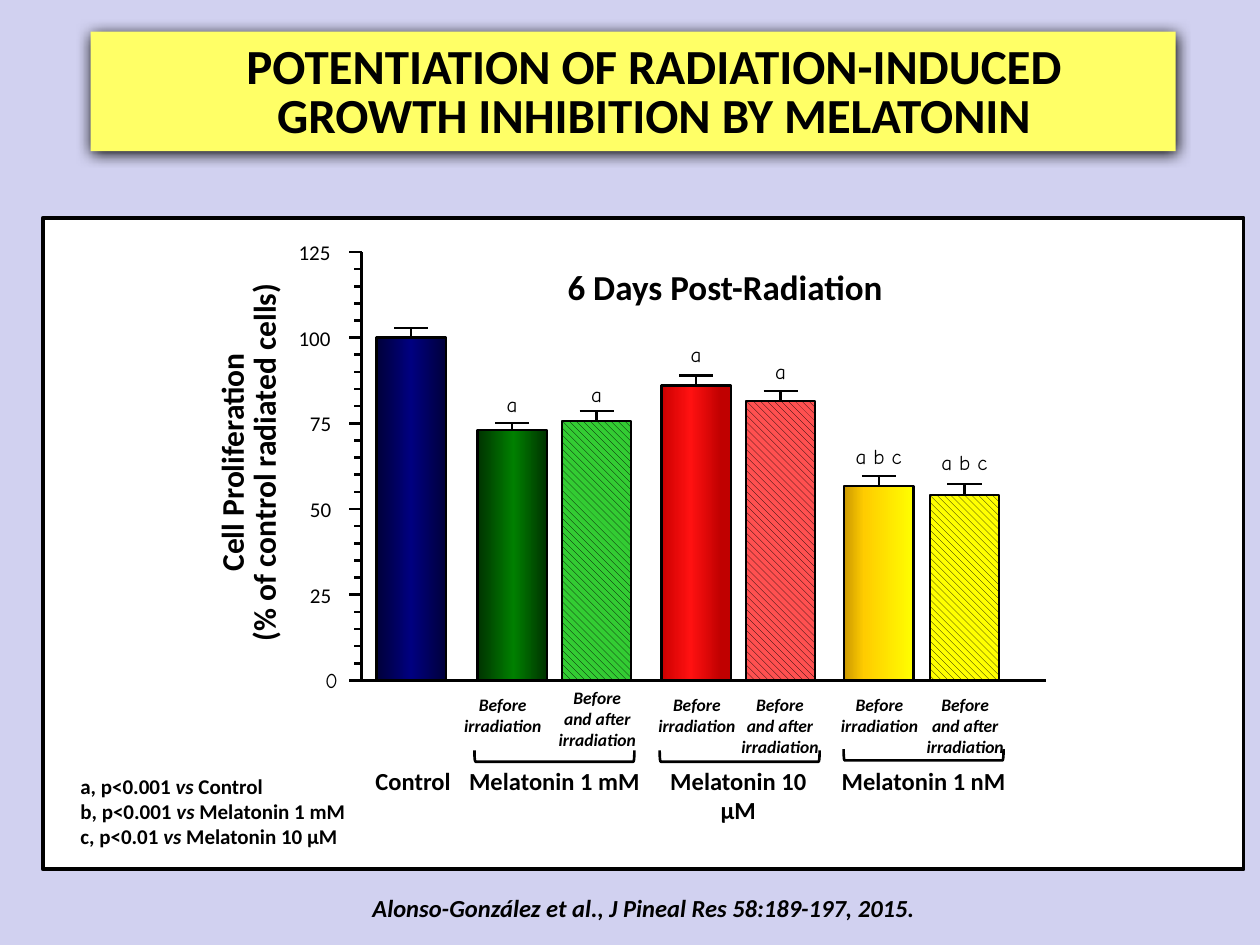
from copy import deepcopy
from dataclasses import dataclass

from lxml import etree
from pptx import Presentation
from pptx import util as u
from pptx.dml.color import RGBColor
from pptx.enum import dml, shapes, text
from pptx.oxml import ns

BLACK, WHITE = "000000", "FFFFFF"
AXIS_LEFT, AXIS_RIGHT, BASELINE, AXIS_TOP = 2.87, 8.3, 5.4, 2.0
TICK_STEP, TICK_MAX = 5, 125
BAR_WIDTH, CAP_WIDTH = 0.55, 0.27
BEFORE, BEFORE_AND_AFTER = "Before irradiation", "Before and after irradiation"


@dataclass
class Bar:
    left: float
    top: float
    cap: float
    stops: tuple = ()
    hatch: str = ""
    line: float = 1.25
    letters: str = ""
    letters_top: float = 0
    caption: str = ""
    caption_left: float = 0
    caption_top: float = 5.46


@dataclass
class Group:
    label: str
    left: float
    width: float
    bracket_center: float
    bracket_middle: float = 6.0


@dataclass
class Style:
    size: float
    bold: bool = False
    italic: bool = False
    font: str = "Calibri"
    align: text.PP_ALIGN = text.PP_ALIGN.CENTER
    margins: bool = True
    wrap: bool = True
    rotation: float = 0
    line_points: float = 0


BARS = [
    Bar(2.99, 2.68, 2.6, ((0, "00003B"), (50, "000080"), (100, "00003B")), line=1.5),
    Bar(3.79, 3.41, 3.36, ((0, "003300"), (48, "008000"), (100, "003300")),
        letters="a", letters_top=3.06, caption=BEFORE, caption_left=3.58),
    Bar(4.46, 3.34, 3.26, hatch="33CC33", letters="a", letters_top=2.98,
        caption=BEFORE_AND_AFTER, caption_left=4.33, caption_top=5.4),
    Bar(5.25, 3.06, 2.98, ((14, "C00000"), (58, "FF1111"), (100, "CC0000")),
        letters="a", letters_top=2.66, caption=BEFORE, caption_left=5.12),
    Bar(5.92, 3.18, 3.1, hatch="FF5050", letters="a", letters_top=2.8,
        caption=BEFORE_AND_AFTER, caption_left=5.78),
    Bar(6.7, 3.86, 3.78, ((0, "FFFF00"), (71, "FFCC00"), (100, "CC9900")),
        letters="a b c", letters_top=3.47, caption=BEFORE, caption_left=6.57),
    Bar(7.38, 3.93, 3.84, hatch="FFFF00", letters="a b c", letters_top=3.52,
        caption=BEFORE_AND_AFTER, caption_left=7.25),
]
GROUPS = [
    Group("Melatonin 1 mM", 3.59, 1.62, 4.4),
    Group("Melatonin 10 µM", 5.06, 1.6, 5.87),
    Group("Melatonin 1 nM", 6.57, 1.52, 7.33, 5.99),
]
LEGEND = [("a, p<0.001 ", "Control"), ("b, p<0.001 ", "Melatonin 1 mM"),
          ("c, p<0.01 ", "Melatonin 10 µM")]


def color(value: str) -> RGBColor:
    return RGBColor.from_string(value)


def add_preset(slide, preset, left: float, top: float, width: float, height: float,
               fill: str = "", line: float = 0):
    shape = slide.shapes.add_shape(preset, *map(u.Inches, (left, top, width, height)))
    shape.shadow.inherit = False
    if fill:
        shape.fill.solid()
        shape.fill.fore_color.rgb = color(fill)
    else:
        shape.fill.background()
    if line:
        shape.line.color.rgb = color(BLACK)
        shape.line.width = u.Pt(line)
    else:
        shape.line.fill.background()
    return shape


def add_line(slide, x1: float, y1: float, x2: float, y2: float, width: float):
    connector = slide.shapes.add_connector(
        shapes.MSO_CONNECTOR.STRAIGHT, *map(u.Inches, (x1, y1, x2, y2)))
    connector.line.color.rgb = color(BLACK)
    connector.line.width = u.Pt(width)
    etree.SubElement(connector._element.spPr, ns.qn("a:effectLst"))
    return connector


def style_paragraph(paragraph, style: Style) -> None:
    paragraph.alignment = style.align
    font = paragraph.font
    font.name, font.size = style.font, u.Pt(style.size)
    font.bold, font.italic = style.bold, style.italic
    font.color.rgb = color(BLACK)
    if style.line_points:
        paragraph.line_spacing = u.Pt(style.line_points)


def add_text(slide, content: str, left: float, top: float, width: float, height: float,
             style: Style) -> None:
    box = slide.shapes.add_textbox(*map(u.Inches, (left, top, width, height)))
    box.rotation = style.rotation
    frame = box.text_frame
    frame.word_wrap = style.wrap
    if not style.margins:
        frame.margin_left = frame.margin_right = frame.margin_top = frame.margin_bottom = 0
    frame.text = content
    style_paragraph(frame.paragraphs[0], style)


def fill_gradient(shape, stops: tuple) -> None:
    shape.fill.gradient()
    shape.fill.gradient_angle = 180
    stop_list = shape._element.spPr.find(".//" + ns.qn("a:gsLst"))
    stop_list.append(deepcopy(stop_list[0]))
    for stop, (position, value) in zip(shape.fill.gradient_stops, stops):
        stop.position = position / 100
        stop.color.rgb = color(value)


def fill_hatch(shape, background: str) -> None:
    shape.fill.patterned()
    shape.fill.pattern = dml.MSO_PATTERN.WIDE_DOWNWARD_DIAGONAL
    shape.fill.fore_color.rgb = color(BLACK)
    shape.fill.back_color.rgb = color(background)


def add_bar(slide, bar: Bar) -> None:
    center = bar.left + BAR_WIDTH / 2
    shape = add_preset(slide, shapes.MSO_SHAPE.RECTANGLE, bar.left, bar.top, BAR_WIDTH,
                       BASELINE - bar.top, line=bar.line)
    if bar.hatch:
        fill_hatch(shape, bar.hatch)
    else:
        fill_gradient(shape, bar.stops)
    stem = add_line(slide, center, bar.top, center, bar.cap, 1.25)
    stem.begin_connect(shape, 0)
    add_line(slide, center - CAP_WIDTH / 2, bar.cap, center + CAP_WIDTH / 2, bar.cap, 1.25)
    if bar.letters:
        add_text(slide, bar.letters, center - 0.33, bar.letters_top, 0.66, 0.3,
                 Style(12, font="Comic Neue"))
    if bar.caption:
        add_text(slide, bar.caption, bar.caption_left, bar.caption_top, 0.82,
                 0.44 if bar.caption == BEFORE else 0.61, Style(10, bold=True, italic=True))


def add_axes(slide) -> None:
    add_line(slide, AXIS_LEFT, BASELINE, AXIS_RIGHT, BASELINE, 1.5)
    add_line(slide, AXIS_LEFT, BASELINE, AXIS_LEFT, AXIS_TOP, 1.5)
    for value in range(0, TICK_MAX + 1, TICK_STEP):
        y = BASELINE - (BASELINE - AXIS_TOP) * value / TICK_MAX
        major = value % 25 == 0
        add_line(slide, AXIS_LEFT, y, AXIS_LEFT - (0.1 if major else 0.06), y, 1.5)
        if major:
            width = 0.09 * len(str(value))
            right = 2.64 if value else 2.67
            add_text(slide, str(value), right - width, y - 0.1, width, 0.2,
                     Style(12, font="Calibri" if value else "Comic Neue",
                           align=text.PP_ALIGN.LEFT, margins=False, wrap=False))
    title = Style(18, bold=True, margins=False, wrap=False, rotation=270)
    add_text(slide, "Cell Proliferation", 0.96, 3.52, 1.75, 0.3, title)
    add_text(slide, "(% of control radiated cells)", 0.66, 3.52, 2.86, 0.3, title)


def add_group(slide, group: Group) -> None:
    add_text(slide, group.label, group.left, 6.03, group.width, 0.34, Style(14, bold=True))
    bracket = add_preset(slide, shapes.MSO_SHAPE.RIGHT_BRACKET, group.bracket_center - 0.045,
                         group.bracket_middle - 0.635, 0.09, 1.27, line=1.5)
    bracket.rotation = 90


def add_legend(slide) -> None:
    shape = add_preset(slide, shapes.MSO_SHAPE.RECTANGLE, 0.54, 6.09, 2.34, 0.71, fill=WHITE)
    frame = shape.text_frame
    frame.word_wrap = False
    frame.vertical_anchor = text.MSO_ANCHOR.TOP
    for index, (start, reference) in enumerate(LEGEND):
        paragraph = frame.add_paragraph() if index else frame.paragraphs[0]
        style_paragraph(paragraph, Style(12, bold=True, align=text.PP_ALIGN.LEFT))
        for content, italic in ((start, False), ("vs ", True), (reference, False)):
            run = paragraph.add_run()
            run.text = content
            run.font.italic = italic


def add_title(slide) -> None:
    banner = add_preset(slide, shapes.MSO_SHAPE.RECTANGLE, 0.72, 0.25, 8.61, 0.95, fill="FFFF66")
    effects = banner._element.spPr.find(ns.qn("a:effectLst"))
    shadow = etree.SubElement(effects, ns.qn("a:outerShdw"), blurRad=str(u.Pt(8.5)),
                              dist=str(u.Pt(1)), dir="5400000", rotWithShape="0")
    etree.SubElement(shadow, ns.qn("a:srgbClr"), val=BLACK)
    add_text(slide, "POTENTIATION OF RADIATION-INDUCED GROWTH INHIBITION BY MELATONIN",
             1.65, 0.31, 7.08, 0.89, Style(28, bold=True, line_points=28))


def main() -> None:
    presentation = Presentation()
    presentation.slide_width, presentation.slide_height = u.Inches(10), u.Inches(7.5)
    slide = presentation.slides.add_slide(presentation.slide_layouts[6])
    slide.background.fill.solid()
    slide.background.fill.fore_color.rgb = color("D1D1F0")
    add_preset(slide, shapes.MSO_SHAPE.RECTANGLE, 0.34, 1.73, 9.53, 5.17, fill=WHITE, line=2.25)
    for bar in BARS:
        add_bar(slide, bar)
    add_axes(slide)
    add_text(slide, "Control", 2.98, 6.08, 0.6, 0.24,
             Style(14, bold=True, align=text.PP_ALIGN.LEFT, margins=False, wrap=False))
    for group in GROUPS:
        add_group(slide, group)
    add_title(slide)
    add_text(slide, "6 Days Post-Radiation", 4.23, 2.06, 3.05, 0.44, Style(20, bold=True))
    add_legend(slide)
    add_text(slide, "Alonso-González et al., J Pineal Res 58:189-197, 2015.",
             1.92, 7.04, 6.38, 0.34, Style(14, bold=True, italic=True))
    presentation.save("out.pptx")


if __name__ == "__main__":
    main()
